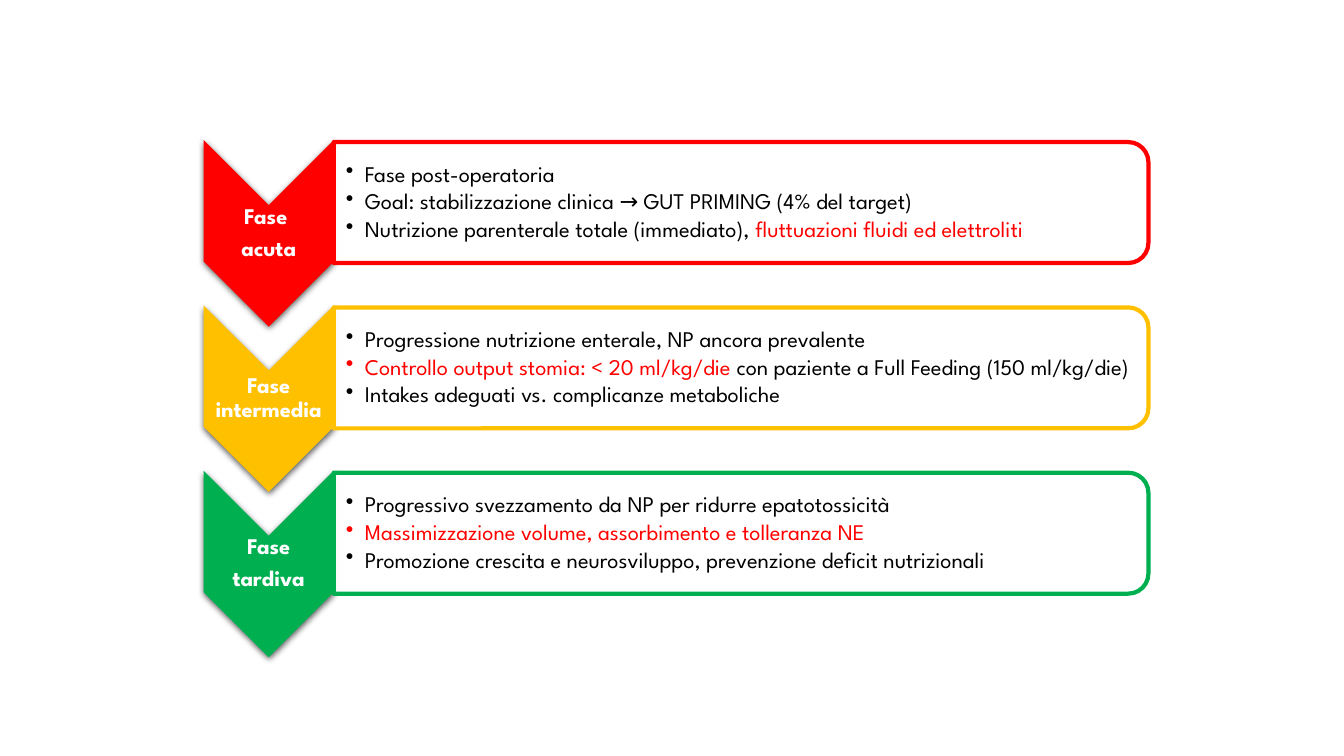
import pptx
import pptx.util
import pptx.dml.color
import pptx.enum.shapes
import pptx.enum.text
import pptx.oxml
import pptx.oxml.ns

Inch, Pt = pptx.util.Inches, pptx.util.Pt
Shape = pptx.enum.shapes.MSO_SHAPE
Align = pptx.enum.text.PP_ALIGN


class Theme:
    font = "League Spartan"
    size = 16
    edge = 3
    white = "FFFFFF"
    black = "000000"
    red = "FF0000"
    amber = "FFC000"
    green = "00B050"


# Each phase: colour, label lines, bullets made of (text, colour) runs
PHASES = [
    (Theme.red, ["Fase ", "acuta"], [
        [("Fase post-operatoria", Theme.black)],
        [("Goal: stabilizzazione clinica → GUT PRIMING (4% del target)", Theme.black)],
        [("Nutrizione parenterale totale (immediato), ", Theme.black),
         ("fluttuazioni fluidi ed elettroliti", Theme.red)],
    ]),
    (Theme.amber, ["Fase intermedia"], [
        [("Progressione nutrizione enterale, NP ancora prevalente", Theme.black)],
        [("Controllo output stomia: < 20 ml/kg/die ", Theme.red),
         ("con paziente a Full Feeding (150 ml/kg/die)", Theme.black)],
        [("Intakes adeguati vs. complicanze metaboliche", Theme.black)],
    ]),
    (Theme.green, ["Fase", "tardiva"], [
        [("Progressivo svezzamento da NP per ridurre epatotossicità", Theme.black)],
        [("Massimizzazione volume, assorbimento e tolleranza NE", Theme.red)],
        [("Promozione crescita e neurosviluppo, prevenzione deficit nutrizionali",
          Theme.black)],
    ]),
]

WIDE, HIGH = 13.33, 7.5
LEFT, TOP, PITCH = 2.02, 1.39, 1.64
ARROW_W, ARROW_H = 1.29, 1.85
PANEL_W, PANEL_H = 8.08, 1.2
LABEL_H, LIST_H = 0.55, 1.09
INSET = 0.01


def tint(code):
    return pptx.dml.color.RGBColor.from_string(code)


def xml(text):
    head, tail = text.split(" ", 1)
    return pptx.oxml.parse_xml(f"{head} {pptx.oxml.ns.nsdecls('a')} {tail}")


def turned(slide, kind, x, y, w, h, color):
    """Add a shape turned by 90 degrees that shows in the box x, y, w, h."""
    shape = slide.shapes.add_shape(
        kind, Inch(x + (w - h) / 2), Inch(y + (h - w) / 2), Inch(h), Inch(w))
    shape.rotation = 90
    shape.shadow.inherit = False
    shape.fill.solid()
    shape.fill.fore_color.rgb = tint(color)
    return shape


def arrow(slide, x, y, color):
    shape = turned(slide, Shape.CHEVRON, x, y, ARROW_W, ARROW_H, color)
    shape.line.fill.background()
    glow = shape._element.spPr.find(pptx.oxml.ns.qn("a:effectLst"))
    glow.append(xml(
        f'<a:outerShdw blurRad="{Pt(4.5)}" dist="{Pt(1.5)}" dir="5400000" '
        f'rotWithShape="0"><a:srgbClr val="{Theme.black}">'
        '<a:alpha val="63000"/></a:srgbClr></a:outerShdw>'))


def panel(slide, x, y, color):
    shape = turned(slide, Shape.ROUND_2_SAME_RECTANGLE, x, y,
                   PANEL_W, PANEL_H, Theme.white)
    shape.line.color.rgb = tint(color)
    shape.line.width = Pt(Theme.edge)
    fill = shape._element.spPr.find(pptx.oxml.ns.qn("a:solidFill"))
    fill[0].append(xml('<a:alpha val="90000"/>'))


def write(slide, x, y, w, h, lines, inset=INSET, bold=False, bullet=False, gap=0):
    box = slide.shapes.add_textbox(Inch(x), Inch(y), Inch(w), Inch(h))
    frame = box.text_frame
    frame.word_wrap = True
    frame.vertical_anchor = pptx.enum.text.MSO_ANCHOR.MIDDLE
    frame.margin_left = Inch(inset)
    frame.margin_right = frame.margin_top = frame.margin_bottom = Inch(INSET)
    for i, runs in enumerate(lines):
        para = frame.paragraphs[0] if i == 0 else frame.add_paragraph()
        para.line_spacing = 0.9
        para.space_after = Pt(gap * Theme.size)
        if bullet:
            para.level = 1
            props = para._p.get_or_add_pPr()
            props.set("marL", str(Inch(0.19)))
            props.set("indent", str(-Inch(0.19)))
            props.append(xml('<a:buChar char="•"/>'))
        else:
            para.alignment = Align.CENTER
        for text, color in runs:
            run = para.add_run()
            run.text = text
            run.font.name = Theme.font
            run.font.size = Pt(Theme.size)
            run.font.bold = bold
            run.font.color.rgb = tint(color)


def main():
    deck = pptx.Presentation()
    deck.slide_width, deck.slide_height = Inch(WIDE), Inch(HIGH)
    slide = deck.slides.add_slide(deck.slide_layouts[6])
    side = LEFT + ARROW_W
    for row, (color, label, points) in enumerate(PHASES):
        y = TOP + row * PITCH
        mid = y + 0.62
        arrow(slide, LEFT, y, color)
        write(slide, LEFT, y + ARROW_W / 2, ARROW_W, LABEL_H,
              [[(line, Theme.white)] for line in label], bold=True, gap=0.35)
        panel(slide, side, mid - PANEL_H / 2, color)
        write(slide, side, mid - LIST_H / 2, PANEL_W - 0.06, LIST_H,
              points, inset=0.12, bullet=True, gap=0.15)
    deck.save("out.pptx")


if __name__ == "__main__":
    main()
